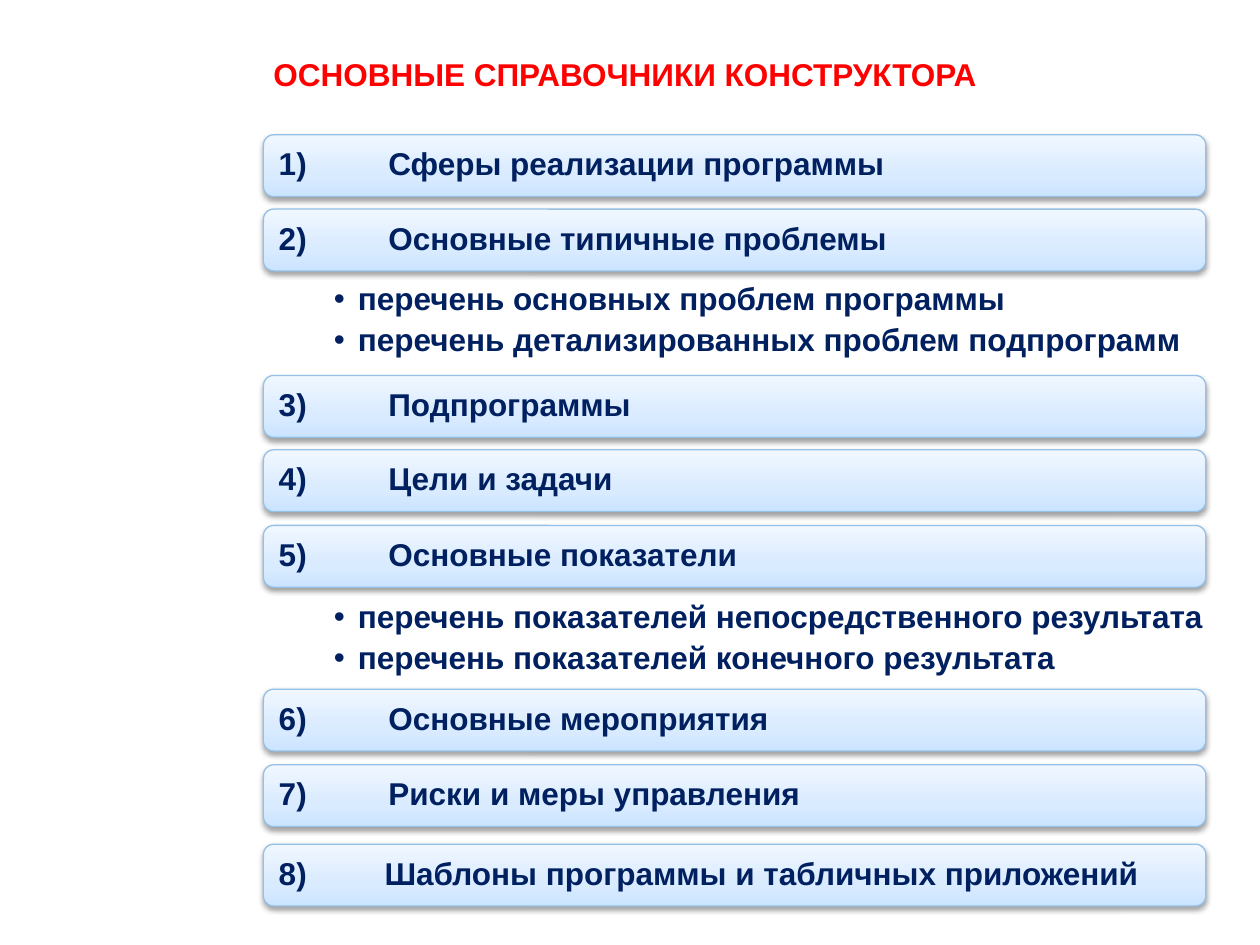
from pptx import Presentation, util as u
from pptx.dml.color import RGBColor
from pptx.enum import shapes, text
from pptx.oxml import parse_xml
from pptx.oxml.ns import nsdecls

NS = nsdecls("a")
NAVY, RED, EDGE = "002060", "FF0000", "96C1E7"
STOPS = [(0, "CBE4FF"), (35, "D9EBFF"), (100, "F0F7FF")]
LEFT, WIDTH, HIGH = 2.09, 7.48, 0.49


def color(code):
    return RGBColor.from_string(code)


def apply(item, values):
    for name, value in values.items():
        setattr(item, name, value)


class Deck:
    font = {"name": "Arial", "size": u.Pt(18), "bold": True}

    def __init__(self, slide):
        self.slide = slide

    def place(self, shape, left, top, width, height):
        box = {"left": left, "top": top, "width": width, "height": height}
        apply(shape, {key: u.Inches(size) for key, size in box.items()})

    def frame(self, shape, pads, anchor):
        sides = ("margin_left", "margin_top", "margin_right", "margin_bottom")
        frame = shape.text_frame
        apply(frame, dict(zip(sides, map(u.Inches, pads))))
        apply(frame, {"word_wrap": True, "vertical_anchor": anchor,
                      "auto_size": text.MSO_AUTO_SIZE.NONE})
        return frame

    def label(self, para, words, code, **style):
        run = para.add_run()
        run.text = words
        apply(run.font, self.font)
        run.font.color.rgb = color(code)
        apply(para, {"alignment": text.PP_ALIGN.LEFT,
                     "space_before": u.Pt(0), **style})

    def title(self, words):
        shape = self.slide.shapes.title
        self.place(shape, 2.17, 0.44, 7.34, 0.94)
        frame = self.frame(shape, [0] * 4, text.MSO_ANCHOR.TOP)
        self.label(frame.paragraphs[0], words, RED, space_after=u.Pt(3))

    def bar(self, top, number, words, tab):
        shape = self.slide.shapes.add_shape(
            shapes.MSO_SHAPE.ROUNDED_RECTANGLE, 0, 0, 0, 0)
        self.place(shape, LEFT, top, WIDTH, HIGH)
        shape.line.color.rgb = color(EDGE)
        shape.line.width = u.Pt(0.75)
        # Gradient fill, darkest at the foot
        stops = "".join(
            f'<a:gs pos="{pos * 1000}"><a:srgbClr val="{code}"/></a:gs>'
            for pos, code in STOPS)
        props = shape.element.spPr
        props.insert(2, parse_xml(
            f'<a:gradFill {NS} rotWithShape="1"><a:gsLst>{stops}</a:gsLst>'
            '<a:lin ang="16200000" scaled="0"/></a:gradFill>'))
        # Soft shadow below
        props.append(parse_xml(
            f'<a:effectLst {NS}><a:outerShdw blurRad="{u.Pt(3.1)}" '
            f'dist="{u.Pt(1.6)}" dir="5400000" rotWithShape="0">'
            '<a:srgbClr val="000000"><a:alpha val="38000"/></a:srgbClr>'
            '</a:outerShdw></a:effectLst>'))
        # Number and label, parted by a tab
        frame = self.frame(shape, [0.1] * 4, text.MSO_ANCHOR.MIDDLE)
        para = frame.paragraphs[0]
        para._p.get_or_add_pPr().append(parse_xml(
            f'<a:tabLst {NS}><a:tab pos="{u.Inches(tab)}" algn="l"/>'
            '</a:tabLst>'))
        self.label(para, f"{number})\t{words}", NAVY, line_spacing=0.9)

    def points(self, top, lines):
        shape = self.slide.shapes.add_textbox(0, 0, 0, 0)
        self.place(shape, 2.4, top, WIDTH, 0.64)
        frame = self.frame(shape, [0.25, 0.03, 0.14, 0.03],
                           text.MSO_ANCHOR.TOP)
        for index, words in enumerate(lines):
            para = frame.add_paragraph() if index else frame.paragraphs[0]
            props = para._p.get_or_add_pPr()
            props.set("marL", str(u.Inches(0.19)))
            props.set("indent", str(u.Inches(-0.19)))
            props.append(parse_xml(f'<a:buFont {NS} typeface="Arial"/>'))
            props.append(parse_xml(f'<a:buChar {NS} char="•"/>'))
            self.label(para, words, NAVY, level=1, line_spacing=0.9,
                       space_after=u.Pt(4))


# Top, label, tab stop
BARS = [
    (1.07, "Сферы реализации программы", 0.87),
    (1.66, "Основные типичные проблемы", 0.87),
    (2.98, "Подпрограммы", 0.87),
    (3.57, "Цели и задачи", 0.87),
    (4.17, "Основные показатели", 0.87),
    (5.47, "Основные мероприятия", 0.87),
    (6.07, "Риски и меры управления", 0.87),
    (6.7, "Шаблоны программы и табличных приложений", 0.84),
]
# Bullets below the bar of that number
POINTS = {
    2: (2.22, ["перечень основных проблем программы",
               "перечень детализированных проблем подпрограмм"]),
    5: (4.74, ["перечень показателей непосредственного результата",
               "перечень показателей конечного результата"]),
}


def main():
    show = Presentation()
    apply(show, {"slide_width": u.Inches(10), "slide_height": u.Inches(7.5)})
    deck = Deck(show.slides.add_slide(show.slide_layouts[5]))
    deck.title("ОСНОВНЫЕ СПРАВОЧНИКИ КОНСТРУКТОРА")
    for number, (top, words, tab) in enumerate(BARS, 1):
        deck.bar(top, number, words, tab)
        if number in POINTS:
            deck.points(*POINTS[number])
    show.save("out.pptx")


if __name__ == "__main__":
    main()
